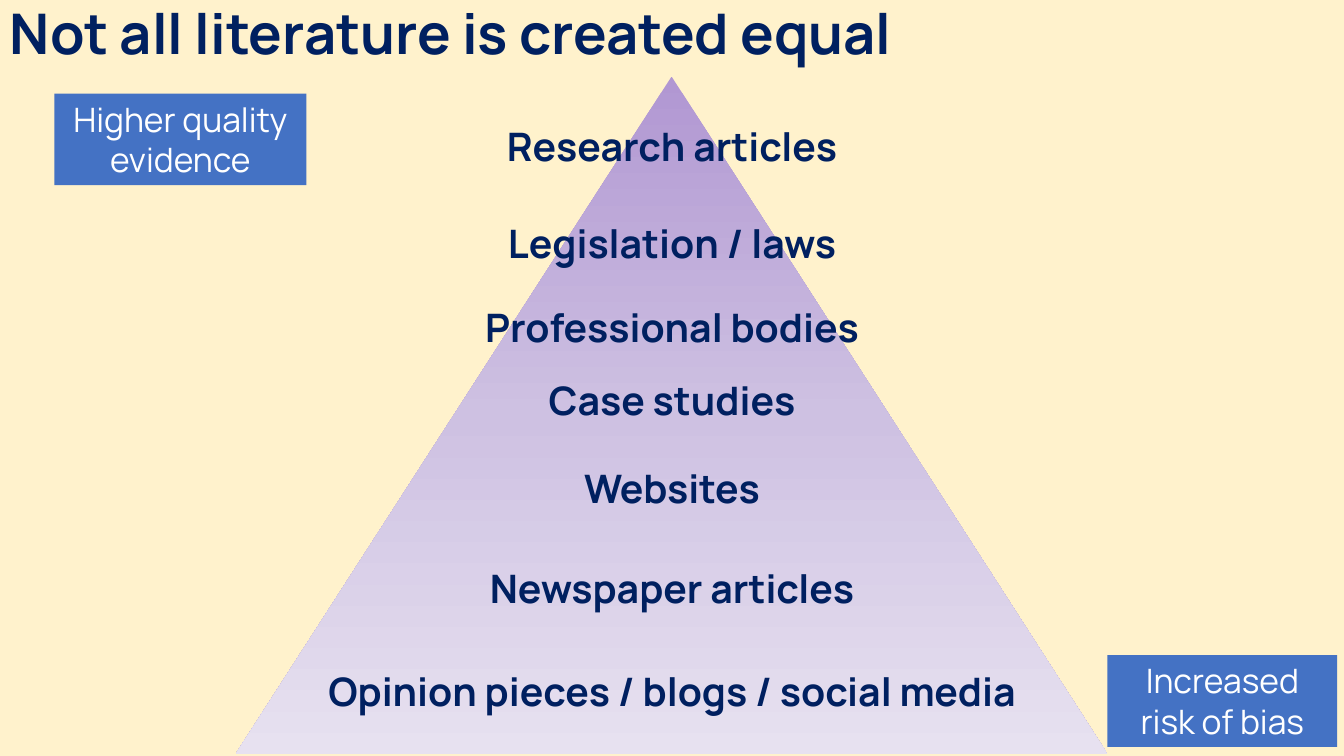
"""Build a slide ranking literature types on an evidence pyramid."""
from copy import deepcopy
from dataclasses import dataclass

from pptx import Presentation
from pptx.dml.color import RGBColor
from pptx.enum.shapes import MSO_SHAPE
from pptx.enum.text import MSO_ANCHOR, MSO_AUTO_SIZE, PP_ALIGN
from pptx.oxml.ns import qn
from pptx.util import Cm, Pt

TRIANGLE, RECTANGLE = MSO_SHAPE.ISOSCELES_TRIANGLE, MSO_SHAPE.RECTANGLE
LEFT, CENTER = PP_ALIGN.LEFT, PP_ALIGN.CENTER
TOP, MIDDLE = MSO_ANCHOR.TOP, MSO_ANCHOR.MIDDLE
FIXED, GROW = MSO_AUTO_SIZE.NONE, MSO_AUTO_SIZE.SHAPE_TO_FIT_TEXT

SLIDE_WIDTH, SLIDE_HEIGHT = 33.87, 19.05
LEVEL_HEIGHT = 1.45
LEVELS = [
    ("Research articles", 2.97, 9.09),
    ("Legislation / laws", 5.41, 12.98),
    ("Professional bodies", 7.52, 10.44),
    ("Case studies", 9.37, 6.78),
    ("Websites", 11.58, 8.13),
    ("Newspaper articles", 14.1, 10.85),
    ("Opinion pieces / blogs / social media", 16.69, 19.23),
]
LABELS = [
    ("Higher quality evidence", (1.37, 2.36, 6.35, 2.31)),
    ("Increased risk of bias", (27.91, 16.51, 5.79, 2.31)),
]


@dataclass(frozen=True)
class Theme:
    """Colours, font and type sizes of the slide."""

    font: str = "Manrope"
    background: str = "FFF2CC"
    ink: str = "002060"
    label_fill: str = "4472C4"
    label_text: str = "FFFFFF"
    pyramid: tuple = ((0, "B197D2"), (0.5, "CEC1E2"), (1, "E7E1F0"))
    title_size: int = 40
    level_size: int = 28
    label_size: int = 24


def rgb(value):
    """Turn a hex string into a colour."""
    return RGBColor.from_string(value)


def apply(target, values):
    """Set each named attribute on the target."""
    for name, value in values.items():
        setattr(target, name, value)


class SlideBuilder:
    """Draw the elements of one slide in one theme."""

    def __init__(self, s, theme):
        """Keep the slide and theme and paint the background."""
        self.s, self.theme = s, theme
        fill = s.background.fill
        fill.solid()
        fill.fore_color.rgb = rgb(theme.background)

    def shape(self, kind, box):
        """Add a preset shape without line or shadow."""
        sp = self.s.shapes.add_shape(kind, *map(Cm, box))
        sp.shadow.inherit = False
        sp.line.fill.background()
        return sp

    def text(self, sp, words, size, color, bold, align=CENTER, anchor=TOP, fit=GROW):
        """Put one styled paragraph into a shape."""
        tf = sp.text_frame
        apply(tf, {"word_wrap": True, "auto_size": fit, "vertical_anchor": anchor})
        p = tf.paragraphs[0]
        p.alignment = align
        r = p.add_run()
        r.text = words
        apply(r.font, {"name": self.theme.font, "size": Pt(size), "bold": bold})
        r.font.color.rgb = rgb(color)
        return p

    def title(self, words, box):
        """Add the slide heading."""
        sp = self.s.shapes.add_textbox(*map(Cm, box))
        p = self.text(sp, words, self.theme.title_size, self.theme.ink, True,
                      LEFT, MIDDLE, FIXED)
        p.line_spacing = 0.9

    def pyramid(self, box):
        """Add the triangle that fades towards its base."""
        sp = self.shape(TRIANGLE, box)
        fill = sp.fill
        fill.gradient()
        fill.gradient_angle = 270
        stops = sp._element.spPr.find(".//" + qn("a:gsLst"))
        stops.append(deepcopy(stops[-1]))
        for stop, (position, color) in zip(fill.gradient_stops, self.theme.pyramid):
            stop.position = position
            stop.color.rgb = rgb(color)

    def level(self, words, top, width):
        """Add one centred pyramid level."""
        box = ((SLIDE_WIDTH - width) / 2, top, width, LEVEL_HEIGHT)
        sp = self.s.shapes.add_textbox(*map(Cm, box))
        self.text(sp, words, self.theme.level_size, self.theme.ink, True)

    def label(self, words, box):
        """Add a filled label."""
        sp = self.shape(RECTANGLE, box)
        sp.fill.solid()
        sp.fill.fore_color.rgb = rgb(self.theme.label_fill)
        self.text(sp, words, self.theme.label_size, self.theme.label_text, False)


def main():
    """Build and save the presentation."""
    prs = Presentation()
    apply(prs, {"slide_width": Cm(SLIDE_WIDTH), "slide_height": Cm(SLIDE_HEIGHT)})
    slide = SlideBuilder(prs.slides.add_slide(prs.slide_layouts[6]), Theme())
    slide.pyramid((5.94, 1.93, 21.97, 17.07))
    slide.title("Not all literature is created equal", (0, -0.08, 25.4, 2.01))
    for level in LEVELS:
        slide.level(*level)
    for label in LABELS:
        slide.label(*label)
    prs.save("out.pptx")


if __name__ == "__main__":
    main()
